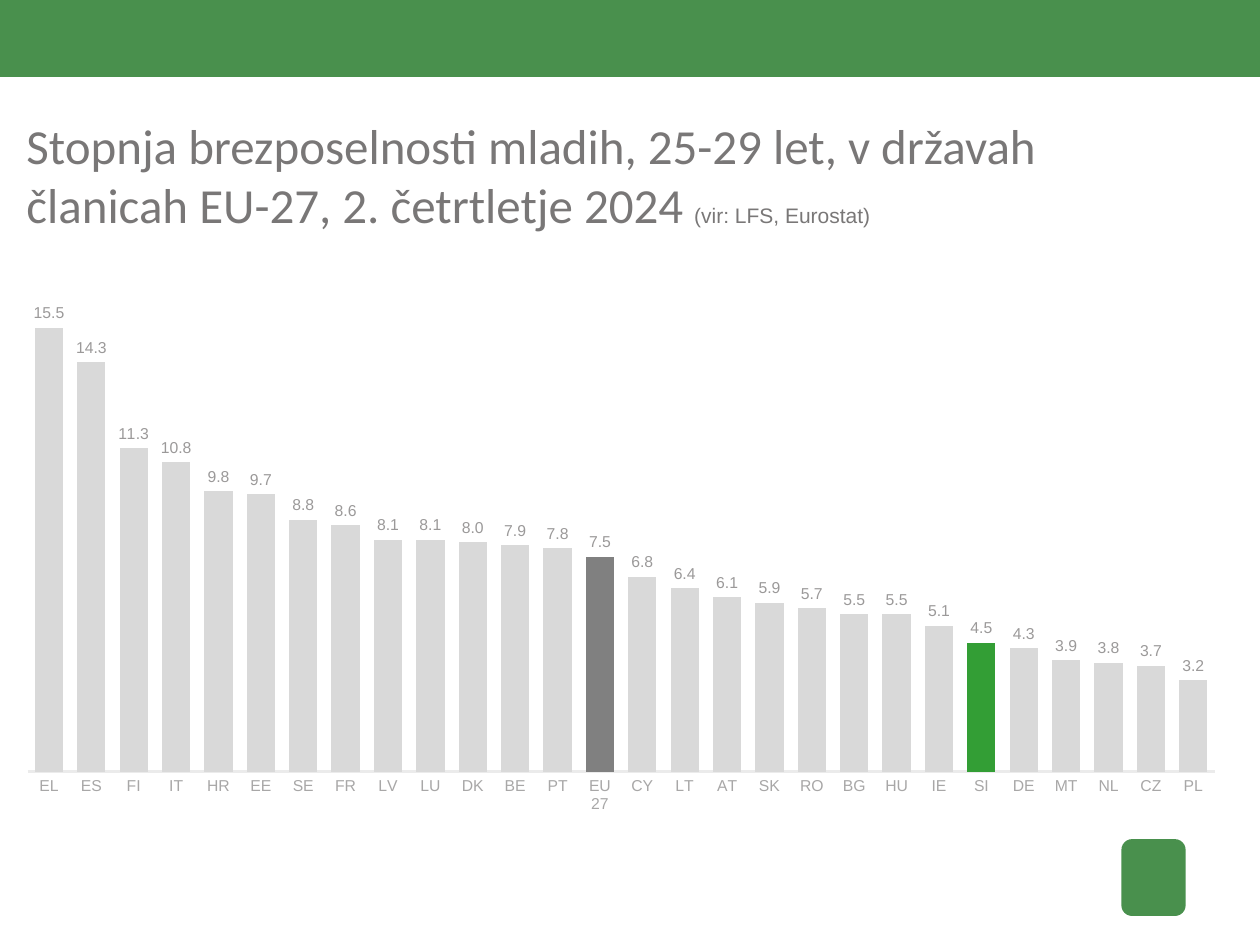
"""Build a slide with a column chart of youth unemployment in the EU-27."""
from lxml import etree
from pptx import Presentation
from pptx.chart.data import CategoryChartData
from pptx.dml.color import RGBColor
from pptx.enum.chart import XL_CHART_TYPE, XL_LABEL_POSITION, XL_TICK_LABEL_POSITION, XL_TICK_MARK
from pptx.enum.shapes import MSO_SHAPE
from pptx.enum.text import MSO_ANCHOR, MSO_AUTO_SIZE, PP_ALIGN
from pptx.oxml.ns import qn
from pptx.util import Inches, Pt

TITLE = "Stopnja brezposelnosti mladih, 25-29 let, v državah članicah EU-27, 2. četrtletje 2024 "
SOURCE = "(vir: LFS, Eurostat)"
RATES = [
    ("EL", 15.5), ("ES", 14.3), ("FI", 11.3), ("IT", 10.8), ("HR", 9.8), ("EE", 9.7), ("SE", 8.8),
    ("FR", 8.6), ("LV", 8.1), ("LU", 8.1), ("DK", 8.0), ("BE", 7.9), ("PT", 7.8), ("EU 27", 7.5),
    ("CY", 6.8), ("LT", 6.4), ("AT", 6.1), ("SK", 5.9), ("RO", 5.7), ("BG", 5.5), ("HU", 5.5),
    ("IE", 5.1), ("SI", 4.5), ("DE", 4.3), ("MT", 3.9), ("NL", 3.8), ("CZ", 3.7), ("PL", 3.2),
]
GREEN = RGBColor(0x49, 0x90, 0x4D)
TEXT_GREY = RGBColor(0x79, 0x77, 0x77)
LABEL_GREY = RGBColor(0x9B, 0x99, 0x99)
AXIS_GREY = RGBColor(0xA8, 0xA7, 0xA7)
LINE_GREY = RGBColor(0xEB, 0xEB, 0xEB)
BAR_GREY = RGBColor(0xD9, 0xD9, 0xD9)
HIGHLIGHTS = {"EU 27": RGBColor(0x80, 0x80, 0x80), "SI": RGBColor(0x33, 0x9E, 0x35)}
PLOT_AREA = {"x": 0, "y": 0.02, "w": 1, "h": 0.88}
NUMBER_FORMAT = "#,##0.0"
NO_TICK = XL_TICK_MARK.NONE


def style_font(font, size, color, name="Arial"):
    font.size, font.name, font.bold = Pt(size), name, False
    font.color.rgb = color


def add_run(p, text, **fmt):
    r = p.add_run()
    r.text = text
    style_font(r.font, **fmt)


def add_block(s, shape, *box):
    sp = s.shapes.add_shape(shape, *map(Inches, box))
    sp.shadow.inherit = False
    sp.fill.solid()
    sp.fill.fore_color.rgb = GREEN
    sp.line.fill.background()


def add_title(s):
    sp = s.shapes.title
    sp.left, sp.top, sp.width, sp.height = map(Inches, (0.21, 0.92, 9.26, 0.71))
    tf = sp.text_frame
    tf.margin_left = tf.margin_top = tf.margin_right = tf.margin_bottom = 0
    tf.vertical_anchor, tf.auto_size, tf.word_wrap = MSO_ANCHOR.TOP, MSO_AUTO_SIZE.NONE, True
    p = tf.paragraphs[0]
    p.alignment = PP_ALIGN.LEFT
    add_run(p, TITLE, size=28, color=TEXT_GREY, name="Calibri")
    add_run(p, SOURCE, size=12, color=TEXT_GREY)


def set_plot_area(chart):
    area = chart.plots[0]._element.getparent()
    for old in area.findall(qn("c:layout")):
        area.remove(old)
    layout = etree.Element(qn("c:layout"))
    manual = etree.SubElement(layout, qn("c:manualLayout"))
    settings = [("layoutTarget", "inner"), ("xMode", "edge"), ("yMode", "edge"), *PLOT_AREA.items()]
    for tag, value in settings:
        etree.SubElement(manual, qn(f"c:{tag}")).set("val", str(value))
    area.insert(0, layout)


def add_rates_chart(s):
    data = CategoryChartData(number_format=NUMBER_FORMAT)
    data.categories = [country for country, _ in RATES]
    data.add_series("Series 1", [rate for _, rate in RATES])
    box = map(Inches, (0.21, 1.94, 9.44, 4.65))
    chart = s.shapes.add_chart(XL_CHART_TYPE.COLUMN_CLUSTERED, *box, data).chart
    chart.has_title = chart.has_legend = False
    style_font(chart.font, 10, TEXT_GREY)
    set_plot_area(chart)

    cat, val = chart.category_axis, chart.value_axis
    for axis in (cat, val):
        axis.major_tick_mark = axis.minor_tick_mark = NO_TICK
        axis.has_major_gridlines = False
        style_font(axis.tick_labels.font, 9, AXIS_GREY)
    cat.format.line.color.rgb = LINE_GREY
    cat.format.line.width = Pt(1.5)
    val.minimum_scale, val.maximum_scale = 0, 18
    val.tick_label_position = XL_TICK_LABEL_POSITION.NONE
    val.format.line.fill.background()

    plot = chart.plots[0]
    plot.gap_width, plot.overlap, plot.vary_by_categories = 50, -27, False
    plot.has_data_labels = True
    labels = plot.data_labels
    labels.show_value, labels.position = True, XL_LABEL_POSITION.OUTSIDE_END
    labels.number_format, labels.number_format_is_linked = NUMBER_FORMAT, False
    style_font(labels.font, 9, LABEL_GREY)

    series = plot.series[0]
    series.invert_if_negative = False
    fills = [(series.format.fill, BAR_GREY)]
    fills += [(series.points[i].format.fill, HIGHLIGHTS[country])
              for i, (country, _) in enumerate(RATES) if country in HIGHLIGHTS]
    for fill, color in fills:
        fill.solid()
        fill.fore_color.rgb = color


def main():
    prs = Presentation()
    prs.slide_width, prs.slide_height = Inches(10), Inches(7.5)
    s = prs.slides.add_slide(prs.slide_layouts[5])
    add_block(s, MSO_SHAPE.RECTANGLE, 0, 0, 10, 0.61)
    add_block(s, MSO_SHAPE.ROUNDED_RECTANGLE, 8.9, 6.66, 0.51, 0.61)
    add_title(s)
    add_rates_chart(s)
    prs.save("out.pptx")


if __name__ == "__main__":
    main()
